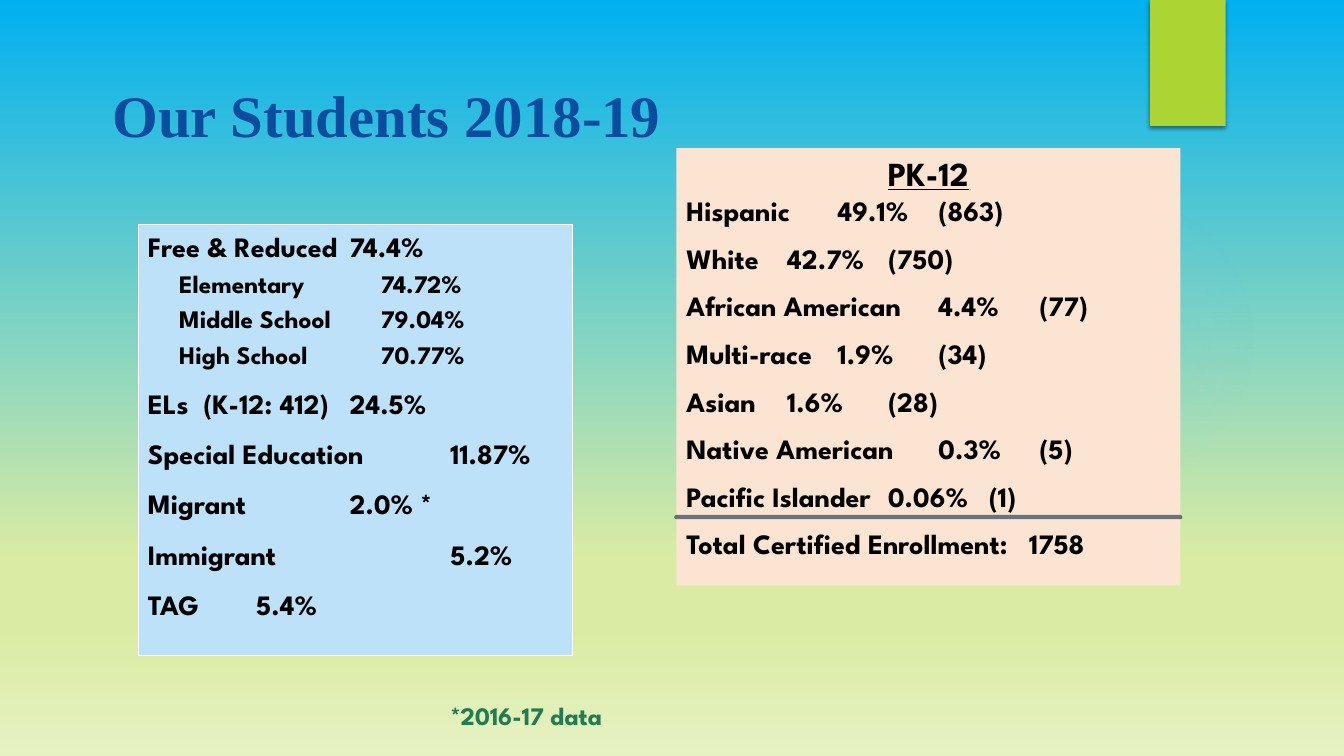
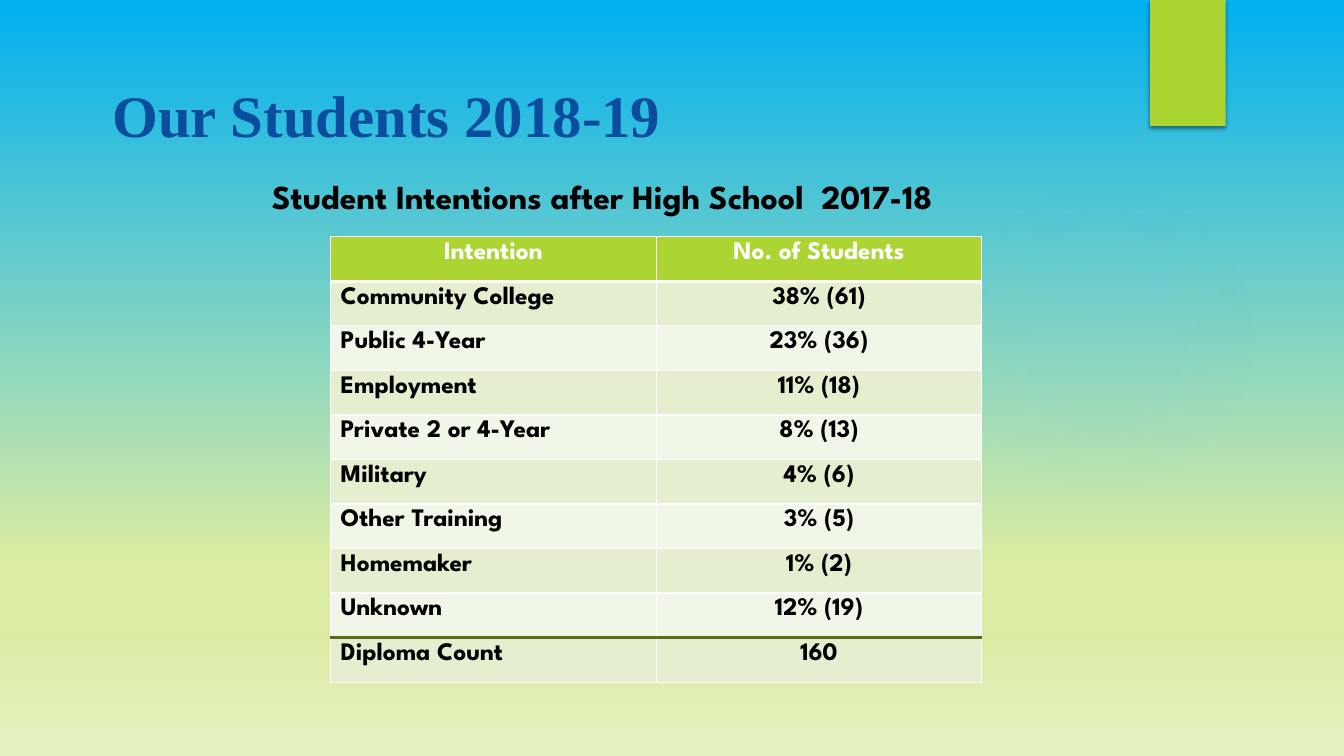
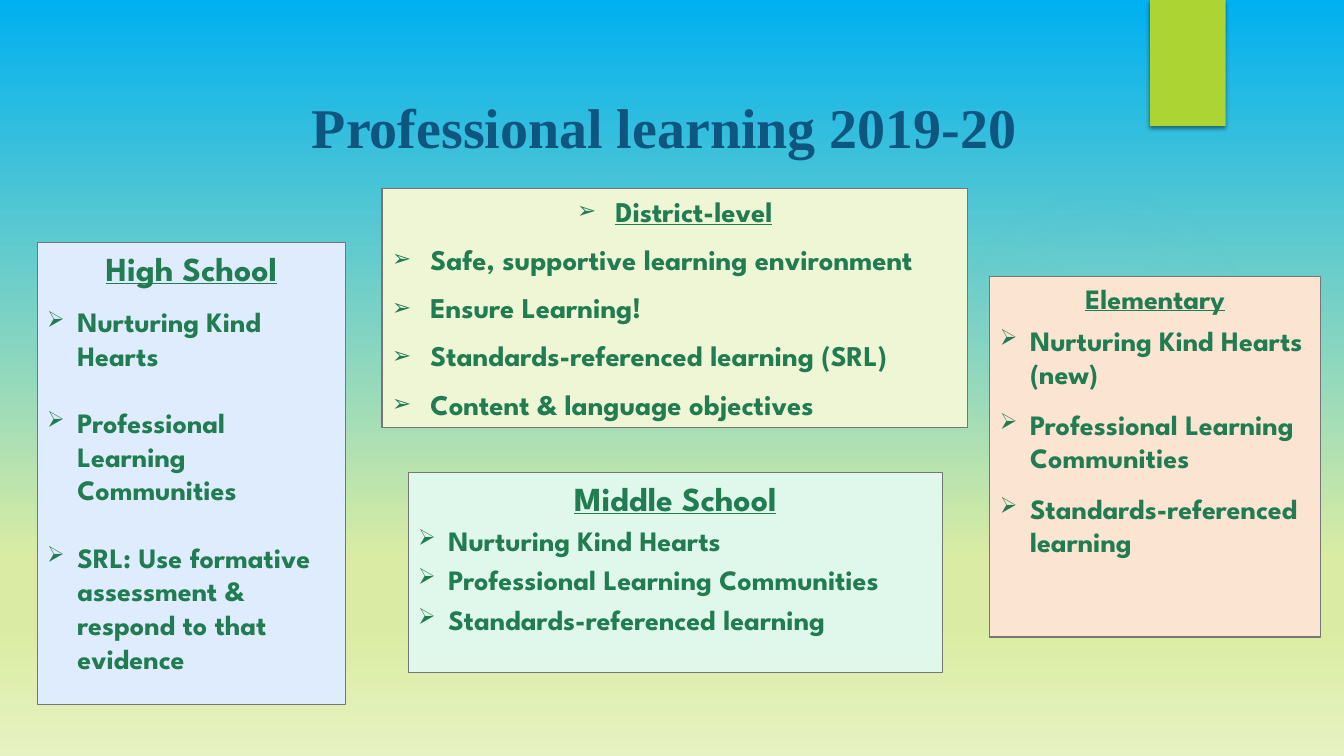
from pptx import Presentation
from pptx.dml.color import RGBColor
from pptx.enum.shapes import MSO_CONNECTOR, MSO_SHAPE
from pptx.enum.text import MSO_ANCHOR, MSO_AUTO_SIZE, PP_ALIGN
from pptx.oxml import parse_xml
from pptx.oxml.ns import nsdecls, qn
from pptx.util import Inches, Pt

RECT, OVAL = MSO_SHAPE.RECTANGLE, MSO_SHAPE.OVAL
STRAIGHT = MSO_CONNECTOR.STRAIGHT
LEFT, CENTER = PP_ALIGN.LEFT, PP_ALIGN.CENTER
TOP, MIDDLE = MSO_ANCHOR.TOP, MSO_ANCHOR.MIDDLE

SLIDE_W, SLIDE_H = Inches(13.33), Inches(7.5)
TITLE_AND_BODY, TITLE_ONLY = 1, 5
BODY_FONT, TITLE_FONT = "League Spartan", "Times New Roman"
COLORS = {
    "sky": "00B0F0", "meadow": "DAECA3", "pale": "E6F2C2", "glow": "7AC4F0",
    "lime": "ACD433", "black": "000000", "white": "FFFFFF", "green": "217C51",
    "title": "0A4D9E", "title_dark": "0E5580", "navy": "072A40",
    "peach": "FCE4D3", "blue": "BDE1F8", "ice": "DEECFD", "mint": "E0F7EC",
    "cream": "EEF6D6", "outline": "767676", "band_dark": "E3EFCE",
    "band_light": "F1F7E8", "olive": "576D17",
}

# Text formats: run attributes are set in a loop, the rest shape the paragraph
RUN_KEYS = ("name", "size", "bold", "underline")
BASE = {"name": BODY_FONT, "size": 20, "bold": True, "underline": False, "color": "black",
        "align": LEFT, "before": 0, "after": 0, "margin": 0, "hang": 0,
        "bullet": False, "tab": 1}
TITLE = {"name": TITLE_FONT, "size": 42, "color": "title", "align": CENTER}
GREEN_HEAD = {"color": "green", "underline": True, "align": CENTER}
GREEN_ITEM = {"color": "green", "bullet": True, "margin": 0.3, "hang": 0.3}


def rgb(name):
    return RGBColor.from_string(COLORS[name])


def place(left, top, width, height):
    """Turn percentages of the slide into lengths."""
    return [round(share * full / 100) for share, full in
            zip((left, top, width, height), (SLIDE_W, SLIDE_H) * 2)]


def move(shape, area):
    for side, length in zip(("left", "top", "width", "height"), place(*area)):
        setattr(shape, side, length)


# Text
def set_bullet(props, on):
    if not on:
        props.append(parse_xml(f'<a:buNone {nsdecls("a")}/>'))
        return
    for xml in (f'<a:buClr {nsdecls("a")}><a:srgbClr val="{COLORS["green"]}"/></a:buClr>',
                f'<a:buSzPct {nsdecls("a")} val="80000"/>',
                f'<a:buChar {nsdecls("a")} char="➢"/>'):
        props.append(parse_xml(xml))


def write(frame, lines):
    """Fill a frame with (text, format) lines."""
    for index, (text, changes) in enumerate(lines):
        look = {**BASE, **changes}
        paragraph = frame.add_paragraph() if index else frame.paragraphs[0]
        props = paragraph._p.get_or_add_pPr()
        for key, inches in (("marL", look["margin"]), ("indent", -look["hang"]),
                            ("defTabSz", look["tab"])):
            props.set(key, str(Inches(inches)))
        set_bullet(props, look["bullet"])
        paragraph.alignment = look["align"]
        paragraph.space_before = Pt(look["before"] if index else 0)
        paragraph.space_after = Pt(look["after"])
        run = paragraph.add_run()
        run.text = text
        for key in RUN_KEYS:
            setattr(run.font, key, Pt(look[key]) if key == "size" else look[key])
        run.font.color.rgb = rgb(look["color"])


def set_frame(frame, anchor=TOP):
    for key, value in {"word_wrap": True, "auto_size": MSO_AUTO_SIZE.NONE,
                       "vertical_anchor": anchor}.items():
        setattr(frame, key, value)
    return frame


def items(texts, **look):
    return [(text, look) for text in texts]


def add_title(slide, text, area, **changes):
    move(slide.shapes.title, area)
    write(set_frame(slide.shapes.title.text_frame, MIDDLE), [(text, {**TITLE, **changes})])


def add_label(slide, text, area, **look):
    label = slide.shapes.add_textbox(*place(*area))
    write(set_frame(label.text_frame), [(text, look)])


# Panels, from a new rectangle or from the body placeholder
def fill_panel(panel, fill, outline, lines):
    panel.fill.solid()
    panel.fill.fore_color.rgb = rgb(fill)
    if outline:
        panel.line.color.rgb = rgb(outline)
        panel.line.width = Pt(0.75)
    else:
        panel.line.fill.background()
    write(set_frame(panel.text_frame), lines)


def add_panel(slide, area, fill, outline, lines):
    panel = slide.shapes.add_shape(RECT, *place(*area))
    panel.shadow.inherit = False
    fill_panel(panel, fill, outline, lines)


def fill_body(slide, area, fill, outline, lines):
    body = slide.placeholders[1]
    move(body, area)
    fill_panel(body, fill, outline, lines)


def add_rule(slide, left, right, y):
    x, top, width, _ = place(left, y, right - left, 0)
    rule = slide.shapes.add_connector(STRAIGHT, x, top, x + width, top)
    rule.line.color.rgb = rgb("navy")
    rule.line.width = Pt(3)
    rule.line._ln.set("cap", "rnd")
    color = next(rule._element.iter(qn("a:srgbClr")))
    color.append(parse_xml(f'<a:alpha {nsdecls("a")} val="60000"/>'))
    rule._element.spPr.append(parse_xml(f'<a:effectLst {nsdecls("a")}/>'))


# Table
def set_borders(cell, top, bottom):
    side = ("white", 1)
    props = cell._tc.get_or_add_tcPr()
    for tag, (color, width) in (("lnL", side), ("lnR", side), ("lnT", top), ("lnB", bottom)):
        props.append(parse_xml(
            f'<a:{tag} {nsdecls("a")} w="{Pt(width)}"><a:solidFill>'
            f'<a:srgbClr val="{COLORS[color]}"/></a:solidFill></a:{tag}>'))


def add_count_table(slide, area, rows):
    box = place(*area)
    table = slide.shapes.add_table(len(rows), len(rows[0]), *box).table
    table.horz_banding = False
    # Lines above each row and below the last one
    rules = [("white", 1)] * (len(rows) + 1)
    rules[1], rules[-2] = ("white", 3), ("olive", 2.25)
    for r, row in enumerate(rows):
        table.rows[r].height = box[3] // len(rows)
        band = "lime" if r == 0 else "band_dark" if r % 2 else "band_light"
        for c, text in enumerate(row):
            cell = table.cell(r, c)
            set_borders(cell, rules[r], rules[r + 1])
            cell.fill.solid()
            cell.fill.fore_color.rgb = rgb(band)
            write(cell.text_frame, [(text, {
                "size": 18, "color": "black" if r else "white",
                "align": LEFT if r and c == 0 else CENTER})])


# Shared background and decoration
def set_gradient(fill, root, stops, shading):
    fill.gradient()
    gradient = next(root.iter(qn("a:gradFill")))
    for child in list(gradient):
        gradient.remove(child)
    marks = "".join(
        f'<a:gs pos="{position * 1000}"><a:srgbClr val="{COLORS[color]}">'
        f'<a:alpha val="{alpha * 1000}"/></a:srgbClr></a:gs>'
        for position, color, alpha in stops)
    gradient.append(parse_xml(f'<a:gsLst {nsdecls("a")}>{marks}</a:gsLst>'))
    gradient.append(parse_xml(shading))


def decorate_master(master, slide):
    """Shapes are drawn on a slide, then moved to the master."""
    set_gradient(master.background.fill, master.element,
                 [(0, "sky", 100), (74, "meadow", 100), (83, "meadow", 100), (100, "pale", 100)],
                 f'<a:lin {nsdecls("a")} ang="5400000" scaled="0"/>')
    glow = slide.shapes.add_shape(OVAL, *place(70.57, 24.4, 23.1, 41.07))
    set_gradient(glow.fill, glow._element,
                 [(0, "glow", 7), (36, "glow", 6), (69, "glow", 0)],
                 f'<a:path {nsdecls("a")} path="circle">'
                 '<a:fillToRect l="50000" t="50000" r="50000" b="50000"/></a:path>')
    ribbon = slide.shapes.add_shape(RECT, *place(85.57, 0, 5.62, 16.67))
    ribbon.fill.solid()
    ribbon.fill.fore_color.rgb = rgb("lime")
    for index, shape in enumerate((glow, ribbon)):
        shape.line.fill.background()
        shape.shadow.inherit = False
        shape._element.nvSpPr.cNvPr.set("id", str(20 + index))
        master.shapes._spTree.insert(2 + index, shape._element)
    next(ribbon._element.iter(qn("a:effectLst"))).append(parse_xml(
        f'<a:outerShdw {nsdecls("a")} blurRad="{Pt(3)}" dist="{Pt(2)}" dir="5400000" '
        'rotWithShape="0"><a:srgbClr val="000000"><a:alpha val="45000"/></a:srgbClr>'
        '</a:outerShdw>'))


# Slides
STUDENTS_TITLE = ("Our Students 2018-19", (5.85, 9.47, 45.82, 11.2))


def build_students(slide):
    add_title(slide, *STUDENTS_TITLE)
    groups = ["White\t42.7%\t(750)", "African American\t4.4%\t(77)", "Multi-race\t1.9%\t(34)",
              "Asian\t1.6%\t(28)", "Native American\t0.3%\t(5)", "Pacific Islander\t0.06%\t(1)"]
    fill_body(slide, (50.32, 19.6, 37.5, 57.87), "peach", None, [
        ("PK-12", {"size": 24, "underline": True, "align": CENTER}),
        ("Hispanic\t49.1%\t(863)", {"tab": 0.5}),
        *items(groups, before=10, tab=0.5),
        ("Total Certified Enrollment:\t1758", {"before": 10, "tab": 3.4})])
    school = {"size": 18, "margin": 0.31, "before": 3.6}
    programs = ["ELs  (K-12: 412)\t24.5%", "Special Education\t11.87%", "Migrant\t\t2.0% *",
                "Immigrant\t\t5.2%", "TAG\t 5.4%"]
    add_panel(slide, (10.27, 29.73, 32.32, 56.93), "blue", "white", [
        ("Free & Reduced\t74.4%", {}),
        *items(["Elementary\t74.72%", "Middle School\t79.04%"], **school),
        ("High School\t70.77%", {**school, "after": 6}),
        *items(programs, before=6, after=6)])
    add_rule(slide, 50.32, 87.82, 68.4)
    add_label(slide, "*2016-17 data", (32.77, 92, 16.12, 5.33), size=18, color="green")


def build_intentions(slide):
    add_title(slide, *STUDENTS_TITLE)
    add_label(slide, "Student Intentions after High School  2017-18",
              (19.5, 22.67, 58.72, 6.67), size=24)
    add_count_table(slide, (24.6, 31.33, 48.45, 58.93), [
        ("Intention", "No. of Students"),
        ("Community College", "38% (61)"),
        ("Public 4-Year", "23% (36)"),
        ("Employment", "11% (18)"),
        ("Private 2 or 4-Year", "8% (13)"),
        ("Military", "4% (6)"),
        ("Other Training", "3% (5)"),
        ("Homemaker", "1% (2)"),
        ("Unknown", "12% (19)"),
        ("Diploma Count", "160")])


def build_learning(slide):
    add_title(slide, "Professional learning 2019-20", (15.37, 11.2, 68.1, 11.07),
              size=40, color="title_dark")
    district = {**GREEN_ITEM, "size": 20.4, "margin": 0.38, "hang": 0.38, "before": 10}
    fill_body(slide, (28.42, 24.93, 43.58, 31.6), "cream", "outline", [
        ("District-level", {**district, **GREEN_HEAD}),
        *items(["Safe, supportive learning environment", "Ensure Learning!",
                "Standards-referenced learning (SRL)",
                "Content & language objectives"], **district)])
    hearts, communities = "Nurturing Kind Hearts", "Professional Learning Communities"
    standards = "Standards-referenced learning"
    # Heading, area, fill, heading size, space before and after items, items
    levels = [
        ("Middle School", (30.37, 62.53, 39.75, 26.4), "mint", 24, 4, 0,
         [hearts, communities, standards]),
        ("Elementary", (73.65, 36.53, 24.6, 47.73), "peach", 20, 6, 6,
         [hearts + " (new)", communities, standards]),
        ("High School", (2.77, 32.13, 22.95, 61.07), "ice", 24, 12, 12,
         [hearts, communities, "SRL: Use formative assessment & respond to that evidence"]),
    ]
    for heading, area, fill, size, before, after, goals in levels:
        add_panel(slide, area, fill, "outline", [
            (heading, {**GREEN_HEAD, "size": size}),
            *items(goals, **GREEN_ITEM, before=before, after=after)])


def main():
    deck = Presentation()
    deck.slide_width, deck.slide_height = SLIDE_W, SLIDE_H
    pages = [(TITLE_AND_BODY, build_students), (TITLE_ONLY, build_intentions),
             (TITLE_AND_BODY, build_learning)]
    for number, (layout, build) in enumerate(pages):
        slide = deck.slides.add_slide(deck.slide_layouts[layout])
        if number == 0:
            decorate_master(deck.slide_master, slide)
        build(slide)
    deck.save("out.pptx")


if __name__ == "__main__":
    main()
